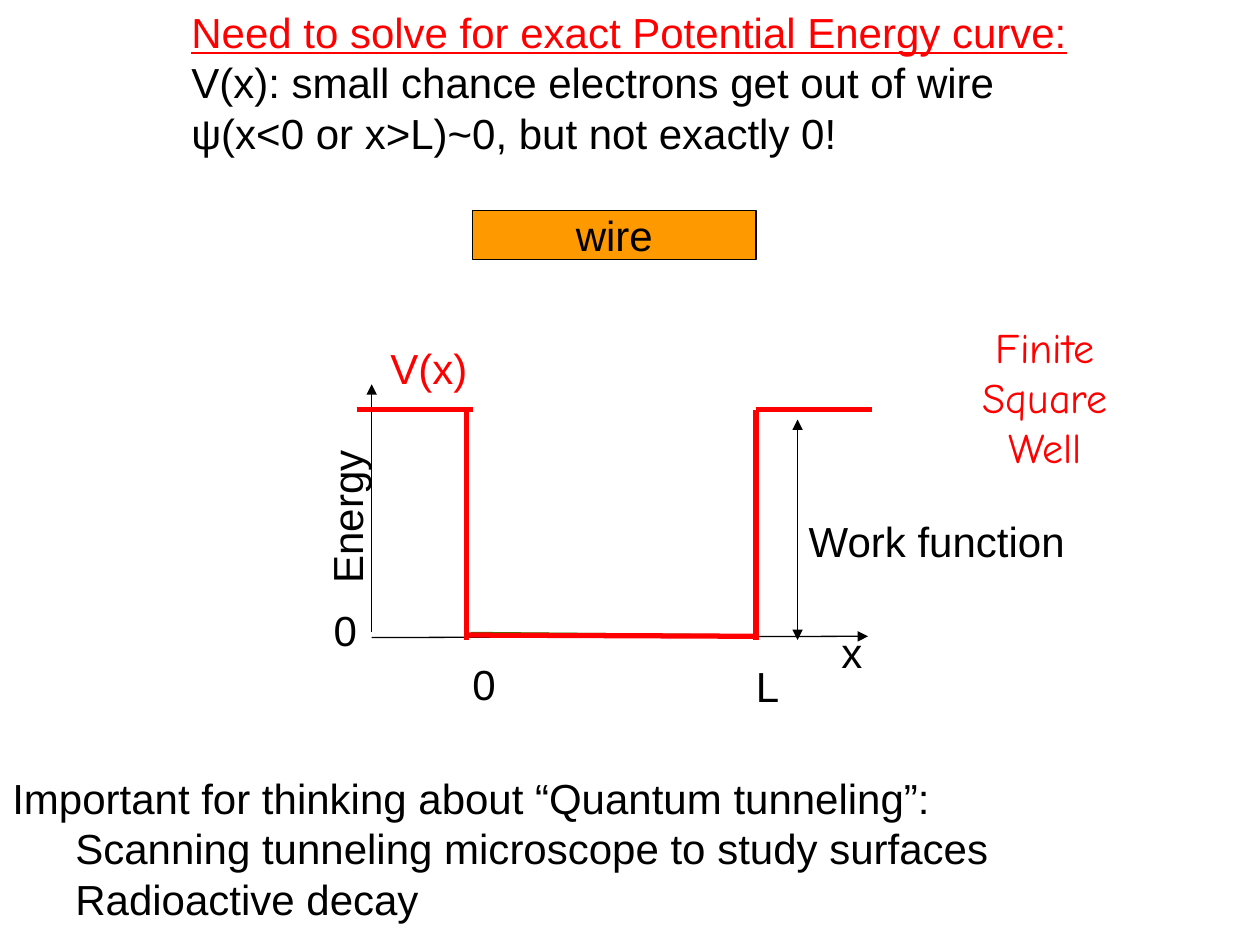
from lxml import etree
from pptx import Presentation
from pptx.dml.color import RGBColor
from pptx.enum import shapes, text
from pptx.oxml.ns import qn
from pptx.util import Inches, Pt

BLACK = RGBColor(0x00, 0x00, 0x00)
RED = RGBColor(0xFF, 0x00, 0x00)
GREEN = RGBColor(0x00, 0x99, 0x00)
ORANGE = RGBColor(0xFF, 0x99, 0x00)
WHITE = RGBColor(0xFF, 0xFF, 0xFF)


def write(tf, lines, color=BLACK, font="Arial", align=None):
    """Fill a text frame with 24-point lines."""
    for i, line in enumerate(lines):
        p = tf.paragraphs[0] if i == 0 else tf.add_paragraph()
        p.text = line
        p.alignment = align
        for r in p.runs:
            r.font.size = Pt(24)
            r.font.name = font
            r.font.color.rgb = color


def add_text(s, box, lines, wrap=True, **style):
    """Add a text box and return it."""
    sp = s.shapes.add_textbox(*map(Inches, box))
    tf = sp.text_frame
    tf.word_wrap = wrap
    tf.auto_size = text.MSO_AUTO_SIZE.SHAPE_TO_FIT_TEXT
    write(tf, lines, **style)
    return sp


def add_line(s, start, end, color=BLACK, width=0.75, arrows=()):
    """Draw a straight line with triangles at the named ends."""
    sp = s.shapes.add_connector(shapes.MSO_CONNECTOR.STRAIGHT,
                                *map(Inches, (*start, *end)))
    sp.line.color.rgb = color
    sp.line.width = Pt(width)
    ln = sp.line._get_or_add_ln()
    for name in arrows:
        etree.SubElement(ln, qn(f"a:{name}"), type="triangle")
    etree.SubElement(sp._element.spPr, qn("a:effectLst"))


def add_heading(s, box):
    """Write the heading with its first line red and underlined."""
    sp = add_text(s, box, ["Need to solve for exact Potential Energy curve:",
                           "V(x): small chance electrons get out of wire",
                           "ψ(x<0 or x>L)~0, but not exactly 0!"])
    font = sp.text_frame.paragraphs[0].runs[0].font
    font.color.rgb = RED
    font.underline = True


def add_wire(s, box):
    """Draw the wire as a labelled bar."""
    sp = s.shapes.add_shape(shapes.MSO_SHAPE.RECTANGLE, *map(Inches, box))
    sp.shadow.inherit = False
    sp.fill.solid()
    sp.fill.fore_color.rgb = ORANGE
    sp.line.color.rgb = BLACK
    sp.line.width = Pt(0.75)
    tf = sp.text_frame
    tf.word_wrap = False
    tf.vertical_anchor = text.MSO_ANCHOR.MIDDLE
    write(tf, ["wire"], align=text.PP_ALIGN.CENTER)


def add_well(s, box):
    """Plot the finite square well with its axes and labels."""
    left, top, width, height = box
    right, floor = left + width, top + height
    wall_l, wall_r = left + 0.87, right - 0.92
    axis, work = left + 0.12, wall_r + 0.33

    def label(x, y, w, words, color=BLACK):
        return add_text(s, (x, y, w, 0.5), [words], wrap=False, color=color)

    add_line(s, (wall_l + 0.04, floor - 0.05), (wall_r + 0.01, floor - 0.03), GREEN, 2.25)
    label(left - 0.28, floor - 0.33, 0.48, "0")
    add_line(s, (axis, top - 0.2), (axis, floor - 0.06), arrows=["headEnd"])
    label(left - 0.71, top + 0.6, 1.26, "Energy").rotation = 270
    add_line(s, (axis, floor - 0.02), (right - 0.03, floor - 0.03), arrows=["tailEnd"])
    label(right - 0.34, floor - 0.16, 0.37, "x")
    label(wall_l - 0.05, floor + 0.1, 0.39, "0")
    label(wall_r - 0.1, floor + 0.11, 0.39, "L")
    label(left + 0.17, top - 0.58, 0.81, "V(x)", RED)
    for start, end in (((left, top), (wall_l + 0.05, top)),
                       ((wall_l, top), (wall_l, floor)),
                       ((wall_r, top), (wall_r, floor)),
                       ((wall_r, top), (right, top)),
                       ((wall_l - 0.01, floor - 0.04), (wall_r + 0.02, floor - 0.03))):
        add_line(s, start, end, RED, 3)
    add_line(s, (work, top + 0.08), (work, floor), arrows=["headEnd", "tailEnd"])
    label(work - 0.01, top + 0.79, 2.24, "Work function")


def add_uses(s, box):
    """List where tunneling matters."""
    add_text(s, box, ["Important for thinking about “Quantum tunneling”:",
                      "\tScanning tunneling microscope to study surfaces",
                      "\tRadioactive decay"])


def add_well_name(s, box):
    """Name the kind of well beside the plot."""
    add_text(s, box, ["Finite", "Square Well"], color=RED, font="Comic Neue",
             align=text.PP_ALIGN.CENTER)


def main():
    """Build and save the slide."""
    prs = Presentation()
    prs.slide_width, prs.slide_height = Inches(10), Inches(7.5)
    s = prs.slides.add_slide(prs.slide_layouts[6])
    s.background.fill.solid()
    s.background.fill.fore_color.rgb = WHITE
    add_heading(s, (1.42, 0, 8.32, 1.31))
    add_wire(s, (3.75, 1.67, 2.25, 0.39))
    add_well(s, (2.83, 3.25, 4.09, 1.83))
    add_uses(s, (0, 6.08, 9.67, 1.31))
    add_well_name(s, (7.58, 2.5, 1.43, 1.5))
    prs.save("out.pptx")


if __name__ == "__main__":
    main()
